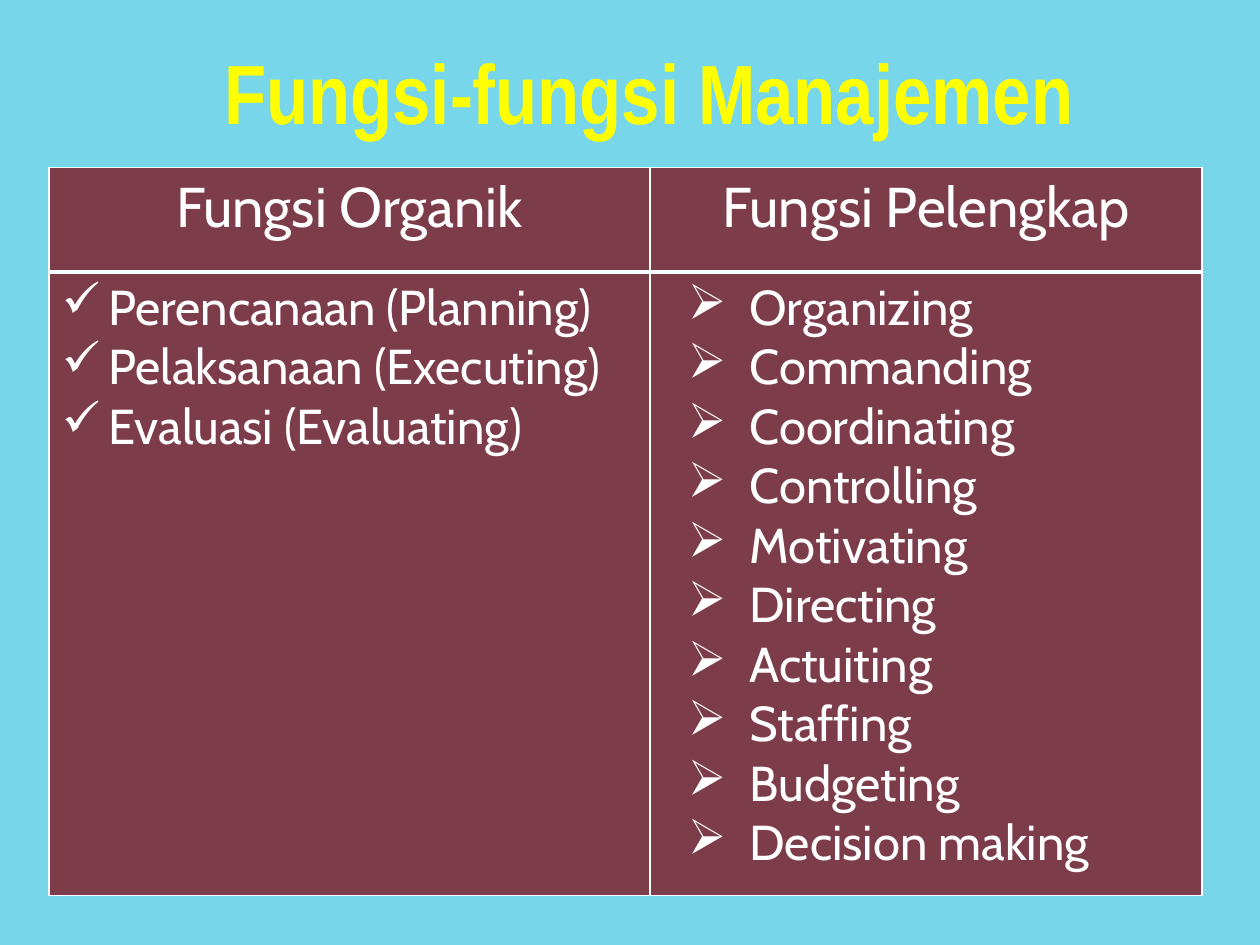
import pptx
import pptx.dml.color
import pptx.enum.text
import pptx.oxml
import pptx.oxml.ns
import pptx.util
from lxml import etree

Inches, Pt = pptx.util.Inches, pptx.util.Pt
RGBColor = pptx.dml.color.RGBColor
ALIGN = pptx.enum.text.PP_ALIGN
ANCHOR = pptx.enum.text.MSO_ANCHOR

SKY = RGBColor(0x78, 0xD6, 0xEA)
MAROON = RGBColor(0x7D, 0x3C, 0x4A)
YELLOW = RGBColor(0xFF, 0xFF, 0x00)
WHITE = RGBColor(0xFF, 0xFF, 0xFF)

WIDTH, HEIGHT = Inches(10), Inches(7.5)
COLUMN_WIDTHS = (4.77, 4.38)
ROW_HEIGHTS = (0.83, 4.95)

TITLE_FORMAT = {"name": "Arial Narrow", "size": Pt(48), "bold": True}
HEADING_FORMAT = {"name": "Cabin", "size": Pt(32), "bold": False}
ITEM_FORMAT = {"name": "Cabin", "size": Pt(28), "bold": False}

# heading, bullet, left margin, hanging indent, functions
FUNCTION_GROUPS = (
    ("Fungsi Organik", "✓", 0.37, 0.37,
     ("Perencanaan (Planning)", "Pelaksanaan (Executing)",
      "Evaluasi (Evaluating)")),
    ("Fungsi Pelengkap", "➢", 0.69, 0.49,
     ("Organizing", "Commanding", "Coordinating", "Controlling", "Motivating",
      "Directing", "Actuiting", "Staffing", "Budgeting", "Decision making")),
)


def write_line(paragraph, text, font_format, color, alignment=ALIGN.LEFT):
    paragraph.alignment = alignment
    run = paragraph.add_run()
    run.text = text
    for attribute, value in font_format.items():
        setattr(run.font, attribute, value)
    run.font.color.rgb = color


def set_bullet(paragraph, mark, margin, hanging):
    properties = paragraph._p.get_or_add_pPr()
    properties.set("marL", str(Inches(margin)))
    properties.set("indent", str(-Inches(hanging)))
    bullet = etree.SubElement(properties, pptx.oxml.ns.qn("a:buChar"))
    bullet.set("char", mark)


def style_cell(cell, bottom_width):
    """Draw the white borders, then fill the cell."""
    properties = cell._tc.get_or_add_tcPr()
    for side, width in (("L", 1), ("R", 1), ("T", 1), ("B", bottom_width)):
        properties.append(pptx.oxml.parse_xml(
            f'<a:ln{side} {pptx.oxml.ns.nsdecls("a")} w="{Pt(width)}">'
            f'<a:solidFill><a:srgbClr val="{WHITE}"/></a:solidFill>'
            f'</a:ln{side}>'))
    cell.fill.solid()
    cell.fill.fore_color.rgb = MAROON


def add_title(slide, text):
    title = slide.shapes.add_textbox(
        int(WIDTH * 0.132), int(HEIGHT * 0.052),
        int(WIDTH * 0.767), int(HEIGHT * 0.089))
    frame = title.text_frame
    frame.word_wrap = True
    frame.vertical_anchor = ANCHOR.MIDDLE
    write_line(frame.paragraphs[0], text, TITLE_FORMAT, YELLOW, ALIGN.CENTER)


def add_function_table(slide):
    table = slide.shapes.add_table(
        len(ROW_HEIGHTS), len(COLUMN_WIDTHS),
        int(WIDTH * 0.039), int(HEIGHT * 0.177),
        Inches(sum(COLUMN_WIDTHS)), Inches(sum(ROW_HEIGHTS))).table
    table.first_row = table.horz_banding = False
    for column, width in zip(table.columns, COLUMN_WIDTHS):
        column.width = Inches(width)
    for row, height in zip(table.rows, ROW_HEIGHTS):
        row.height = Inches(height)

    for index, (heading, mark, margin, hanging, functions) in enumerate(FUNCTION_GROUPS):
        heading_cell, list_cell = table.cell(0, index), table.cell(1, index)
        style_cell(heading_cell, bottom_width=3)
        style_cell(list_cell, bottom_width=1)
        write_line(heading_cell.text_frame.paragraphs[0], heading,
                   HEADING_FORMAT, WHITE, ALIGN.CENTER)
        frame = list_cell.text_frame
        for number, function in enumerate(functions):
            paragraph = frame.add_paragraph() if number else frame.paragraphs[0]
            set_bullet(paragraph, mark, margin, hanging)
            write_line(paragraph, function, ITEM_FORMAT, WHITE)


def main():
    presentation = pptx.Presentation()
    presentation.slide_width, presentation.slide_height = WIDTH, HEIGHT
    slide = presentation.slides.add_slide(presentation.slide_layouts[6])
    slide.background.fill.solid()
    slide.background.fill.fore_color.rgb = SKY
    add_title(slide, "Fungsi-fungsi Manajemen")
    add_function_table(slide)
    presentation.save("out.pptx")


if __name__ == "__main__":
    main()
